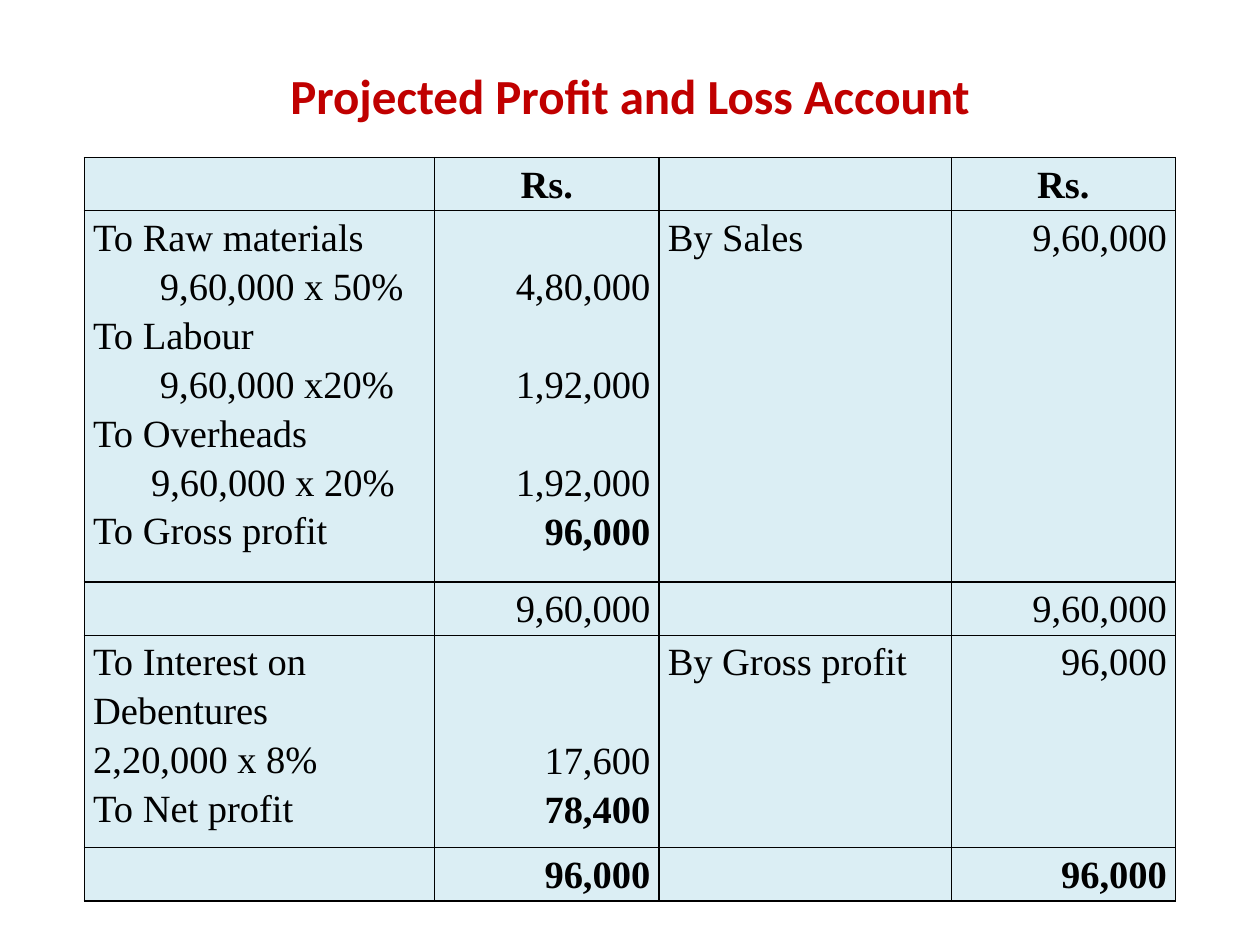
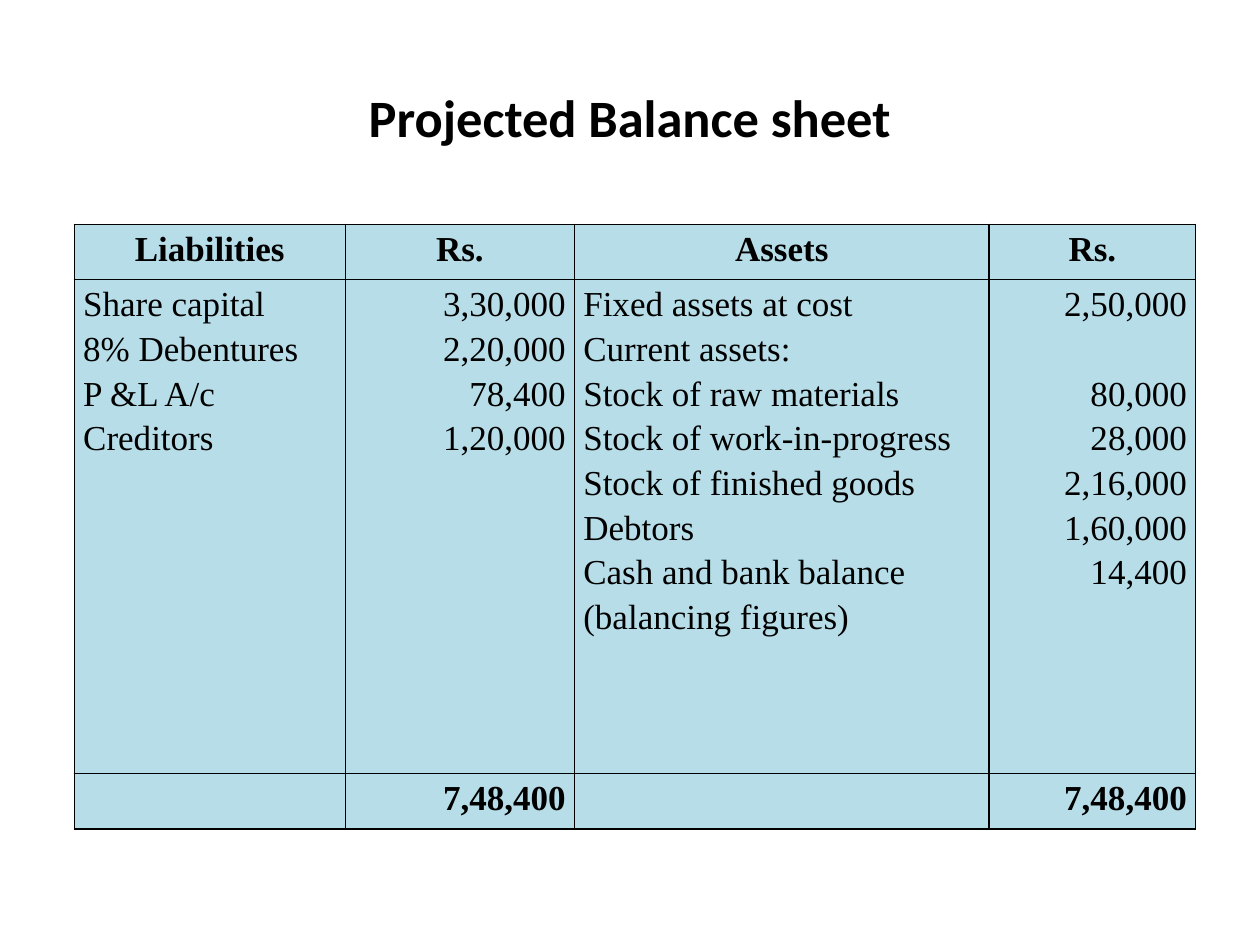
from collections import namedtuple

from lxml import etree
from pptx import Presentation
from pptx.dml.color import RGBColor
from pptx.enum.text import MSO_ANCHOR, PP_ALIGN
from pptx.oxml.ns import qn
from pptx.util import Inches, Pt

LEFT, CENTER, RIGHT = PP_ALIGN.LEFT, PP_ALIGN.CENTER, PP_ALIGN.RIGHT
MIDDLE = MSO_ANCHOR.MIDDLE

COLORS = {
    "black": "000000",
    "red": "C00000",
    "pale": "DBEEF4",
    "aqua": "B7DEE8",
}
TITLE_FONT = "Calibri"
TABLE_FONT = "Times New Roman"
LINE_SPACING = 1.15
LINE_PITCH = 1.275
COLUMN_ALIGNS = [LEFT, RIGHT, LEFT, RIGHT]

Line = namedtuple("Line", "text bold indent skip", defaults=(False, 0, 0))


class Statement:
    def __init__(self):
        self.deck = Presentation()
        self.deck.slide_width = Inches(10)
        self.deck.slide_height = Inches(7.5)
        self.page = None

    def add_page(self):
        self.page = self.deck.slides.add_slide(self.deck.slide_layouts[6])

    def add_span(self, para, text, font, size, color, bold):
        span = para.add_run()
        span.text = text
        span.font.name = font
        span.font.size = Pt(size)
        span.font.bold = bold
        span.font.color.rgb = RGBColor.from_string(COLORS[color])

    def add_title(self, text, size, color, bottom=0.05):
        box = self.page.shapes.add_textbox(Inches(0.5), Inches(0.3), Inches(9), Inches(1.25))
        frame = box.text_frame
        frame.word_wrap = True
        frame.vertical_anchor = MIDDLE
        frame.margin_bottom = Inches(bottom)
        para = frame.paragraphs[0]
        para.alignment = CENTER
        self.add_span(para, text, TITLE_FONT, size, color, True)

    def add_borders(self, cell):
        properties = cell._tc.get_or_add_tcPr()
        for side in ("a:lnL", "a:lnR", "a:lnT", "a:lnB"):
            border = etree.SubElement(properties, qn(side), w=str(Pt(1)))
            fill = etree.SubElement(border, qn("a:solidFill"))
            etree.SubElement(fill, qn("a:srgbClr"), val=COLORS["black"])

    def fill_cell(self, cell, lines, size, align, bold):
        pitch = LINE_PITCH * size
        for number, line in enumerate(lines):
            if isinstance(line, str):
                line = Line(line)
            if number == 0:
                para = cell.text_frame.paragraphs[0]
                cell.margin_top = Pt(line.skip * pitch)
            else:
                para = cell.text_frame.add_paragraph()
                if line.skip:
                    para.space_before = Pt(line.skip * pitch)
            para.alignment = align
            para.line_spacing = LINE_SPACING
            if line.indent:
                para._p.get_or_add_pPr().set("marL", str(Inches(line.indent)))
            self.add_span(para, line.text, TABLE_FONT, size, "black", bold or line.bold)

    def add_table(self, left, top, widths, heights, rows, size, fill):
        frame = self.page.shapes.add_table(
            len(heights), len(widths), Inches(left), Inches(top),
            Inches(sum(widths)), Inches(sum(heights)))
        table = frame.table
        table.first_row = table.horz_banding = False
        for column, width in zip(table.columns, widths):
            column.width = Inches(width)
        for row, height in zip(table.rows, heights):
            row.height = Inches(height)
        for row_number, row in enumerate(rows):
            for column_number, lines in enumerate(row):
                cell = table.cell(row_number, column_number)
                cell.margin_left = cell.margin_right = Inches(0.07)
                cell.margin_top = cell.margin_bottom = 0
                self.add_borders(cell)
                cell.fill.solid()
                cell.fill.fore_color.rgb = RGBColor.from_string(COLORS[fill])
                header = row_number == 0
                align = CENTER if header else COLUMN_ALIGNS[column_number]
                self.fill_cell(cell, lines, size, align, header)


def total_row(amount, bold):
    return [[], [Line(amount, bold)]] * 2


def build_profit_and_loss(statement):
    statement.add_page()
    statement.add_title("Projected Profit and Loss Account", 28, "red", bottom=0.4)
    trading = [
        ["To Raw materials", Line("9,60,000 x 50%", indent=0.53),
         "To Labour", Line("9,60,000 x20%", indent=0.53),
         "To Overheads", Line("9,60,000 x 20%", indent=0.46),
         "To Gross profit"],
        [Line("4,80,000", skip=1), Line("1,92,000", skip=1),
         Line("1,92,000", skip=1), Line("96,000", bold=True)],
        ["By Sales"],
        ["9,60,000"],
    ]
    profit = [
        ["To Interest on Debentures", "2,20,000 x 8%", "To Net profit"],
        [Line("17,600", skip=2), Line("78,400", bold=True)],
        ["By Gross profit"],
        ["96,000"],
    ]
    rows = [
        [[], ["Rs."], [], ["Rs."]],
        trading,
        total_row("9,60,000", False),
        profit,
        total_row("96,000", True),
    ]
    statement.add_table(0.67, 1.25, [2.78, 1.78, 2.32, 1.78],
                        [0.39, 2.8, 0.39, 1.59, 0.39], rows, 22, "pale")


def build_balance_sheet(statement):
    statement.add_page()
    statement.add_title("Projected Balance sheet", 30, "black")
    balances = [
        ["Share capital", "8% Debentures", "P &L A/c", "Creditors"],
        ["3,30,000", "2,20,000", "78,400", "1,20,000"],
        ["Fixed assets at cost", "Current assets:", "Stock of raw materials",
         "Stock of work-in-progress", "Stock of finished goods", "Debtors",
         "Cash and bank balance", "(balancing figures)"],
        ["2,50,000", Line("80,000", skip=1), "28,000", "2,16,000", "1,60,000", "14,400"],
    ]
    rows = [
        [["Liabilities"], ["Rs."], ["Assets"], ["Rs."]],
        balances,
        total_row("7,48,400", True),
    ]
    statement.add_table(0.59, 1.78, [2.15, 1.82, 3.29, 1.64],
                        [0.44, 3.92, 0.44], rows, 20, "aqua")


def main():
    statement = Statement()
    build_profit_and_loss(statement)
    build_balance_sheet(statement)
    statement.deck.save("out.pptx")


if __name__ == "__main__":
    main()
